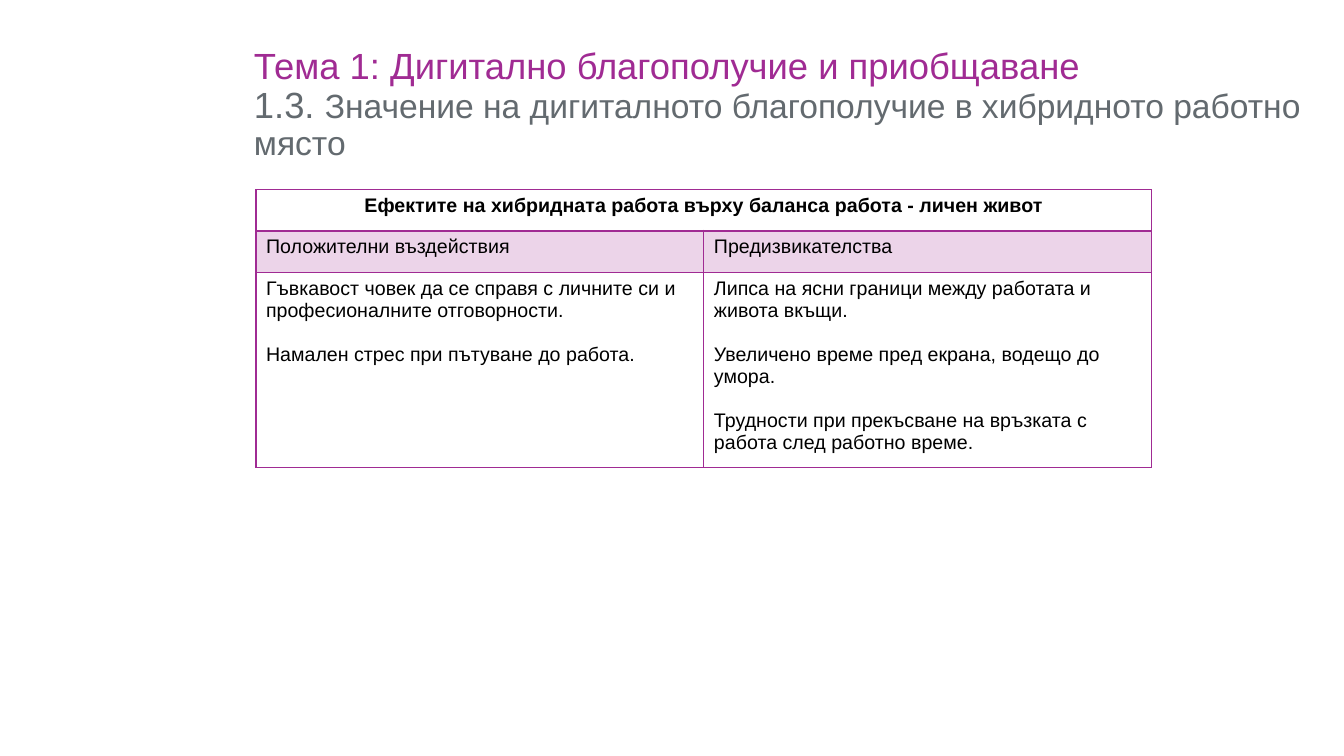
from lxml import etree
from pptx import Presentation
from pptx.dml.color import RGBColor
from pptx.enum.text import MSO_ANCHOR, PP_ALIGN
from pptx.oxml.ns import qn
from pptx.util import Cm, Pt

CENTER, LEFT = PP_ALIGN.CENTER, PP_ALIGN.LEFT
TOP = MSO_ANCHOR.TOP

# Content
TITLE = [
    [("Тема 1: Дигитално благополучие и приобщаване", "topic")],
    [("1.3. ", "number"),
     ("Значение на дигиталното благополучие в хибридното работно място", "subtitle")],
]
TABLE_HEADING = "Ефектите на хибридната работа върху баланса работа - личен живот"
EFFECTS = {
    "Положителни въздействия": [
        "Гъвкавост човек да се справя с личните си и професионалните отговорности.",
        "Намален стрес при пътуване до работа.",
    ],
    "Предизвикателства": [
        "Липса на ясни граници между работата и живота вкъщи.",
        "Увеличено време пред екрана, водещо до умора.",
        "Трудности при прекъсване на връзката с работа след работно време.",
    ],
}

# Theme
PURPLE, GREY, BLACK = "A02B93", "636A6F", "000000"
THEME = {
    "topic": {"size": 26, "color": PURPLE, "bold": False},
    "number": {"size": 26, "color": GREY, "bold": False},
    "subtitle": {"size": 24, "color": GREY, "bold": False},
    "heading": {"size": 14, "color": BLACK, "bold": True},
    "body": {"size": 14, "color": BLACK, "bold": False},
}
FONT = "Arial"
TINT_PERCENT = 20
PARAGRAPH_GAP = Pt(15.7)

# Layout
TITLE_BOX = (Cm(6.15), Cm(1.09), Cm(27.38), Cm(2.59))
TABLE_LEFT, TABLE_TOP = Cm(6.45), Cm(4.78)
COLUMN_WIDTH = Cm(11.29)
ROW_HEIGHTS = (Cm(1.04), Cm(1.04), Cm(4.72))


def add_run(paragraph, text, style):
    run = paragraph.add_run()
    run.text = text
    values = THEME[style]
    for name, value in {"name": FONT, "size": Pt(values["size"]),
                        "bold": values["bold"]}.items():
        setattr(run.font, name, value)
    run.font.color.rgb = RGBColor.from_string(values["color"])


def get_paragraph(frame, index):
    return frame.add_paragraph() if index else frame.paragraphs[0]


def write_cell(cell, lines, style="body", alignment=LEFT):
    for index, line in enumerate(lines):
        paragraph = get_paragraph(cell.text_frame, index)
        paragraph.alignment = alignment
        if index:
            paragraph.space_before = PARAGRAPH_GAP
        add_run(paragraph, line, style)


def fill_cell(cell, tinted):
    if not tinted:
        cell.fill.background()
        return
    cell.fill.solid()
    cell.fill.fore_color.rgb = RGBColor.from_string(PURPLE)
    color = cell._tc.tcPr.find(".//" + qn("a:srgbClr"))
    etree.SubElement(color, qn("a:alpha"), val=str(TINT_PERCENT * 1000))


def border_cell(cell, top, bottom):
    properties = cell._tc.get_or_add_tcPr()
    widths = {"a:lnL": 1, "a:lnR": 1, "a:lnT": top, "a:lnB": bottom}
    for position, (tag, width) in enumerate(widths.items()):
        line = etree.Element(qn(tag), w=str(Pt(width)))
        fill = etree.SubElement(line, qn("a:solidFill"))
        etree.SubElement(fill, qn("a:srgbClr"), val=PURPLE)
        properties.insert(position, line)


presentation = Presentation()
presentation.slide_width, presentation.slide_height = Cm(33.87), Cm(19.05)
slide = presentation.slides.add_slide(presentation.slide_layouts[6])

# Title
title_frame = slide.shapes.add_textbox(*TITLE_BOX).text_frame
title_frame.word_wrap = True
title_frame.vertical_anchor = TOP
for index, runs in enumerate(TITLE):
    paragraph = get_paragraph(title_frame, index)
    paragraph.line_spacing = 0.9
    for text, style in runs:
        add_run(paragraph, text, style)

# Table
table = slide.shapes.add_table(
    len(ROW_HEIGHTS), len(EFFECTS), TABLE_LEFT, TABLE_TOP,
    COLUMN_WIDTH * len(EFFECTS), sum(ROW_HEIGHTS)).table
table.first_row = table.horz_banding = False
for column in table.columns:
    column.width = COLUMN_WIDTH
for row, height in zip(table.rows, ROW_HEIGHTS):
    row.height = height

table.cell(0, 0).merge(table.cell(0, len(EFFECTS) - 1))
write_cell(table.cell(0, 0), [TABLE_HEADING], "heading", CENTER)
for column_index, (label, effects) in enumerate(EFFECTS.items()):
    write_cell(table.cell(1, column_index), [label])
    write_cell(table.cell(2, column_index), effects)

for row_index, row in enumerate(table.rows):
    for cell in row.cells:
        fill_cell(cell, tinted=row_index == 1)
        border_cell(cell, top=2 if row_index == 1 else 1,
                    bottom=2 if row_index == 0 else 1)

presentation.save("out.pptx")
